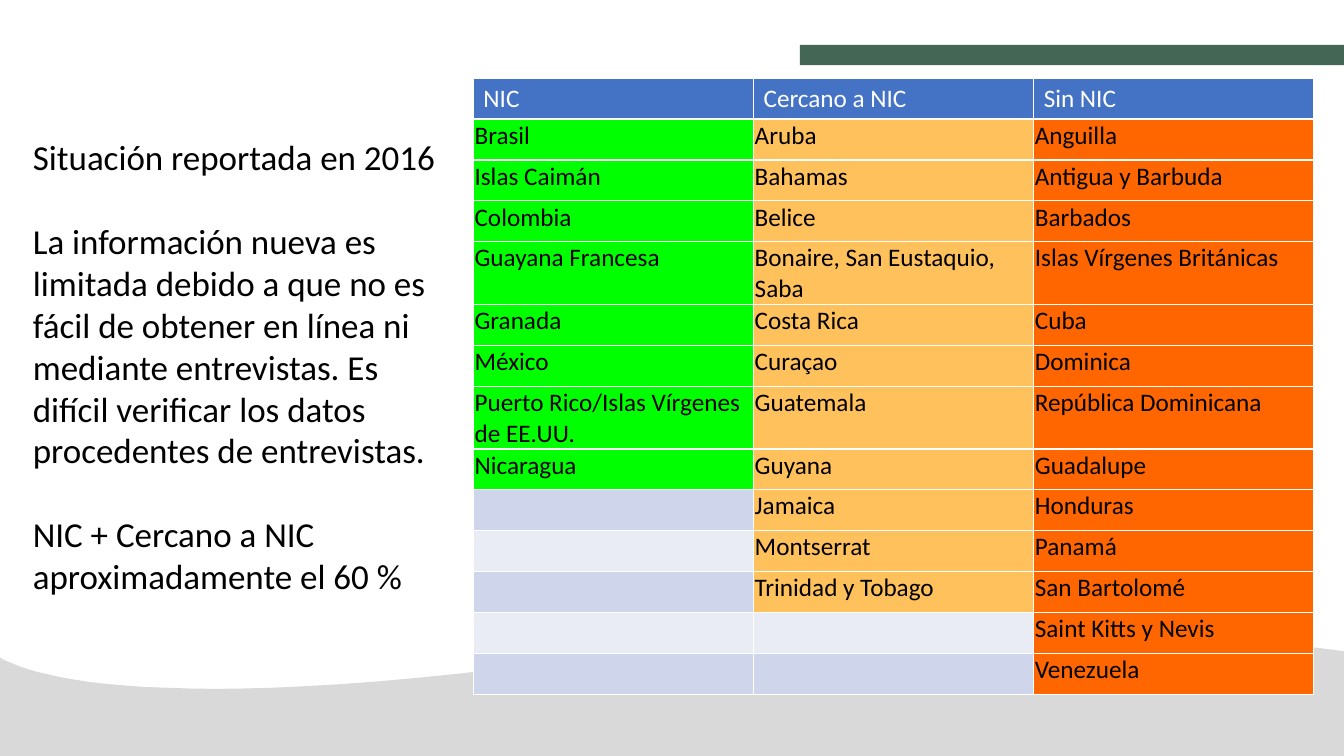
import pptx
import pptx.util
import pptx.dml.color
import pptx.enum.shapes

Cm = pptx.util.Cm
Pt = pptx.util.Pt


def paint(fill, hue):
    fill.solid()
    fill.fore_color.rgb = pptx.dml.color.RGBColor.from_string(hue)


def style(para, size, hue):
    para.font.name = "Calibri"
    para.font.size = Pt(size)
    para.font.bold = False
    paint(para.font.fill, hue)


deck = pptx.Presentation()
deck.slide_width = Cm(33.87)
deck.slide_height = Cm(19.05)
slide = deck.slides.add_slide(deck.slide_layouts[6])
shapes = slide.shapes

# Grey wave: two cubic curves, in hundredths of a centimetre
curves = [
    [(3387, 1641), (2959, 1580), (2291, 1565), (1275, 1684)],
    [(1275, 1684), (338, 1796), (66, 1697), (-5, 1654)],
]
steps = 24
points = []
for curve in curves:
    for step in range(1, steps + 1):
        t = step / steps
        parts = [(1 - t) ** 3, 3 * t * (1 - t) ** 2, 3 * t * t * (1 - t), t ** 3]
        points.append([sum(p * c[axis] for p, c in zip(parts, curve)) for axis in (0, 1)])
outline = shapes.build_freeform(3387, 1905, scale=Cm(0.01))
outline.add_line_segments([curves[0][0]] + points + [(-5, 1905)], close=True)
wave = outline.convert_to_shape()

# Green bar
bar = shapes.add_shape(pptx.enum.shapes.MSO_SHAPE.RECTANGLE,
                       Cm(20.16), Cm(1.13), Cm(13.71), Cm(0.51))
for shape, hue in [(wave, "D9D9D9"), (bar, "436655")]:
    paint(shape.fill, hue)
    shape.line.fill.background()
    shape.shadow.inherit = False

# Country table
heads = ["NIC", "Cercano a NIC", "Sin NIC"]
hues = ["00FF00", "FFC15C", "FF6600"]
bands = ["CFD5EA", "E9EBF5"]
lists = [
    ["Brasil", "Islas Caimán", "Colombia", "Guayana Francesa", "Granada", "México",
     "Puerto Rico/Islas Vírgenes de EE.UU.", "Nicaragua"],
    ["Aruba", "Bahamas", "Belice", "Bonaire, San Eustaquio, Saba", "Costa Rica",
     "Curaçao", "Guatemala", "Guyana", "Jamaica", "Montserrat", "Trinidad y Tobago"],
    ["Anguilla", "Antigua y Barbuda", "Barbados", "Islas Vírgenes Británicas", "Cuba",
     "Dominica", "República Dominicana", "Guadalupe", "Honduras", "Panamá",
     "San Bartolomé", "Saint Kitts y Nevis", "Venezuela"],
]
count = 1 + max(len(names) for names in lists)
high = 1.03
table = shapes.add_table(count, 3, Cm(11.93), Cm(1.97),
                         Cm(21.17), Cm(high * count)).table
for row in table.rows:
    row.height = Cm(high)
for col, names in enumerate(lists):
    table.columns[col].width = Cm(7.06)
    for row in range(count):
        cell = table.cell(row, col)
        para = cell.text_frame.paragraphs[0]
        if row == 0:
            cell.text = heads[col]
            paint(cell.fill, "4472C4")
            style(para, 18, "FFFFFF")
        elif row <= len(names):
            cell.text = names[row - 1]
            paint(cell.fill, hues[col])
            style(para, 18, "000000")
            cell.margin_left = cell.margin_right = cell.margin_top = Cm(0.03)
            cell.margin_bottom = 0
        else:
            paint(cell.fill, bands[(row - 1) % 2])

# Notes on the left
lines = [
    "Situación reportada en 2016",
    "La información nueva es limitada debido a que no es fácil de obtener en línea "
    "ni mediante entrevistas. Es difícil verificar los datos procedentes de entrevistas.",
    "NIC + Cercano a NIC aproximadamente el 60 %",
]
frame = shapes.add_textbox(Cm(0.58), Cm(3.28), Cm(10.95), Cm(12.01)).text_frame
frame.word_wrap = True
for i, line in enumerate(lines):
    para = frame.add_paragraph() if i else frame.paragraphs[0]
    para.text = line
    style(para, 25, "000000")
    if i:
        para.space_before = Pt(30)

deck.save("out.pptx")
